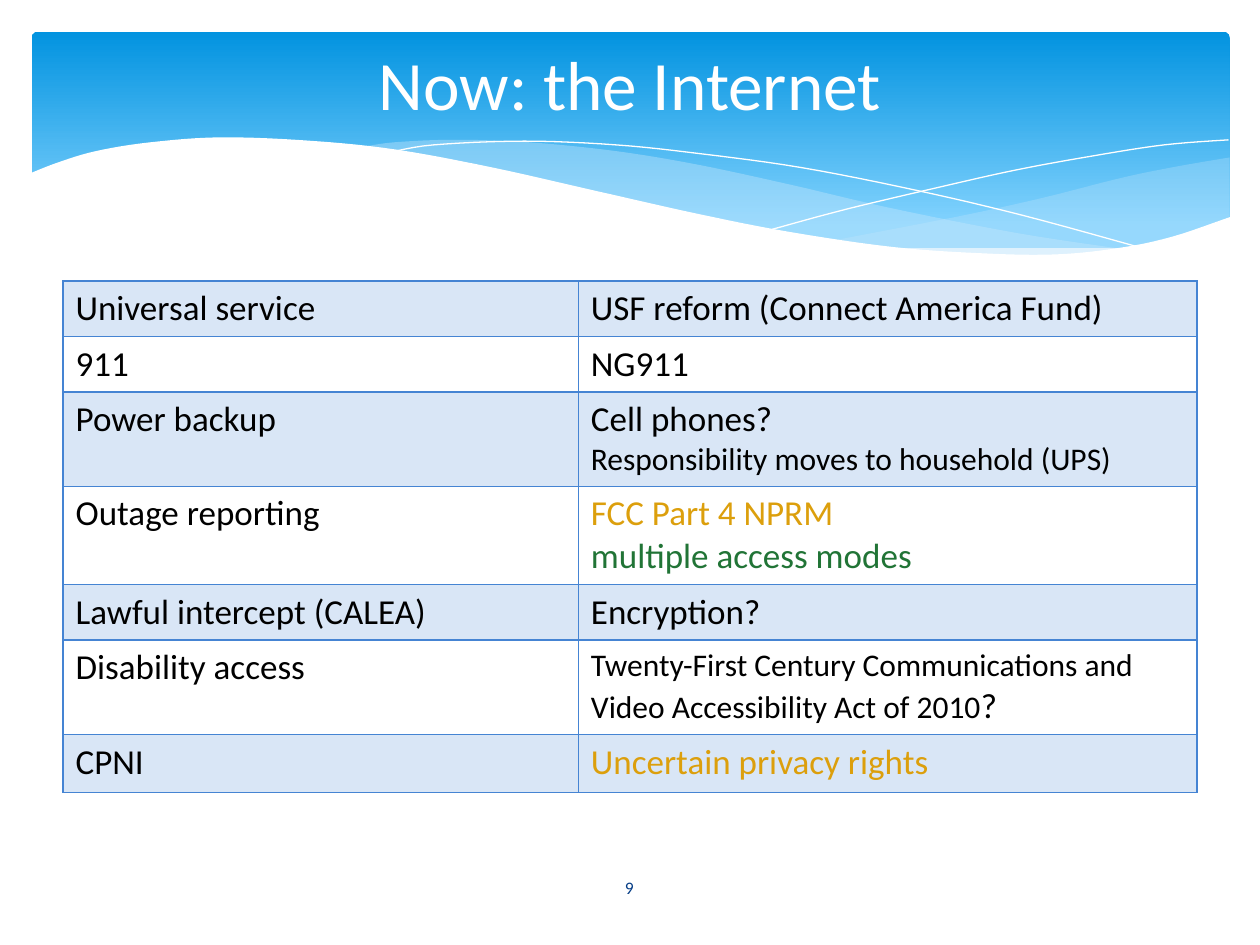
from pptx import Presentation
from pptx.dml.color import RGBColor
from pptx.enum.shapes import MSO_SHAPE
from pptx.enum.text import MSO_ANCHOR, PP_ALIGN
from pptx.oxml import parse_xml
from pptx.oxml.ns import nsdecls, qn
from pptx.util import Inches, Pt
from lxml import etree

ROUND = MSO_SHAPE.ROUNDED_RECTANGLE
MIDDLE = MSO_ANCHOR.MIDDLE
CENTER = PP_ALIGN.CENTER

# The grid has 100 columns and 75 rows
COLS = 100
WHITE, BLACK, BLUE, GOLD, GREEN = "FFFFFF", "000000", "4584D3", "DC9F0C", "217436"
MIST, NAVY, SKY, PALE = "C6E7FC", "073E87", "0293E0", "83D3FE"


def rgb(code):
    return RGBColor.from_string(code)


def smooth(knots, steps=6):
    """Points of a Catmull-Rom curve through the knots."""
    pts = [knots[0], *knots, knots[-1]]
    curve = [knots[0]]
    for a, b, c, d in zip(pts, pts[1:], pts[2:], pts[3:]):
        for i in range(1, steps + 1):
            t = i / steps
            curve.append(tuple(
                (2 * q + (r - p) * t + (2 * p - 5 * q + 4 * r - s) * t ** 2
                 + (3 * q - p - 3 * r + s) * t ** 3) / 2
                for p, q, r, s in zip(a, b, c, d)))
    return curve


class Deck:
    font = {"name": "Calibri", "size": 20, "color": BLACK, "bold": False}

    def __init__(self):
        self.prs = Presentation()
        self.prs.slide_width, self.prs.slide_height = Inches(10), Inches(7.5)
        self.unit = self.prs.slide_width // COLS
        self.slide = self.prs.slides.add_slide(self.prs.slide_layouts[6])
        self.shapes = self.slide.shapes

    def size(self, *cells):
        return [round(n * self.unit) for n in cells]

    def paint(self, fill, color, alpha=100):
        fill.solid()
        fill.fore_color.rgb = rgb(color)
        if alpha < 100:
            tint = fill._xPr.find(qn("a:solidFill"))[0]
            etree.SubElement(tint, qn("a:alpha"), val=str(alpha * 1000))

    def words(self, para, text, **style):
        run = para.add_run()
        run.text = text
        for key, value in {**self.font, **style}.items():
            if key == "color":
                run.font.color.rgb = rgb(value)
            else:
                setattr(run.font, key, Pt(value) if key == "size" else value)

    def banner(self, box, stops):
        shape = self.shapes.add_shape(ROUND, *self.size(*box))
        shape.adjustments[0] = 0.03
        shape.shadow.inherit = False
        shape.line.fill.background()
        shape.fill.gradient()
        shape.fill.gradient_angle = 270
        for stop, (place, color) in zip(shape.fill.gradient_stops, stops):
            stop.position, stop.color.rgb = place, rgb(color)

    def wave(self, *edges, fill=None, alpha=100, line=None):
        first, *rest = [self.size(*p) for edge in edges for p in smooth(edge)]
        outline = self.shapes.build_freeform(*first)
        outline.add_line_segments(rest, close=fill is not None)
        shape = outline.convert_to_shape()
        shape.shadow.inherit = False
        if fill:
            self.paint(shape.fill, fill, alpha)
        else:
            shape.fill.background()
        if line:
            shape.line.color.rgb = rgb(line)
            shape.line.width = Pt(0)
        else:
            shape.line.fill.background()

    def label(self, box, text, **style):
        frame = self.shapes.add_textbox(*self.size(*box)).text_frame
        frame.word_wrap = True
        frame.vertical_anchor = MIDDLE
        frame.paragraphs[0].alignment = CENTER
        self.words(frame.paragraphs[0], text, **style)

    def border(self, cell, color):
        props = cell._tc.get_or_add_tcPr()
        for i, side in enumerate(("lnL", "lnR", "lnT", "lnB")):
            props.insert(i, parse_xml(
                f'<a:{side} {nsdecls("a")} w="12700"><a:solidFill>'
                f'<a:srgbClr val="{color}"/></a:solidFill></a:{side}>'))

    def table(self, left, top, widths, highs, rows):
        box = self.size(left, top, sum(widths), sum(highs))
        table = self.shapes.add_table(len(rows), len(widths), *box).table
        table.first_row = table.horz_banding = False
        for col, width in zip(table.columns, self.size(*widths)):
            col.width = width
        for row, high in zip(table.rows, self.size(*highs)):
            row.height = high
        for r, row in enumerate(rows):
            for c, lines in enumerate(row):
                cell = table.cell(r, c)
                if r % 2:
                    cell.fill.background()
                else:
                    self.paint(cell.fill, BLUE, 20)
                self.border(cell, BLUE)
                frame = cell.text_frame
                for i, runs in enumerate(lines):
                    para = frame.add_paragraph() if i else frame.paragraphs[0]
                    for text, style in runs:
                        self.words(para, text, **style)


def line(text, **style):
    return [(text, style)]


def main():
    deck = Deck()

    # Banner with its waves
    deck.banner((2.5, 2.5, 95.1, 17.2), [(0, SKY), (0.9, PALE)])
    deck.wave([(97.6, 12.5), (93.5, 13.2), (89.1, 14.1), (83.2, 15.6),
               (77.9, 16.8), (72.9, 17.8), (66.1, 19.1)],
              [(66.1, 19.1), (71.9, 19.8), (76.9, 20.2), (81.4, 20.3),
               (86.3, 20.1), (90.5, 19.4), (94.2, 18.5), (97.6, 17.2)],
              fill=MIST, alpha=29)
    deck.wave([(89.3, 19.8), (80.7, 18.5), (70.6, 16.5), (62.9, 14.7),
               (55.5, 13.1), (48.9, 12), (42, 11.3), (36.1, 11.1),
               (31.3, 11.3), (28.6, 11.7)],
              [(28.6, 11.7), (36.2, 12.8), (44.9, 14.7), (53, 16.6),
               (61.8, 18.4), (69.5, 19.6), (76.1, 20.2), (81.8, 20.4),
               (85.7, 20.2), (89.3, 19.8)],
              fill=MIST, alpha=40)
    deck.wave([(30.9, 12.1), (34.4, 11.5), (41.6, 11.2), (48.9, 11.5),
               (55.6, 12.2), (63.6, 13.3), (72.7, 15.1), (81.2, 17.1),
               (90.7, 19.7)], line=WHITE)
    deck.wave([(61.3, 18.2), (67.2, 16.6), (74.8, 14.8), (80.6, 13.5),
               (86.6, 12.4), (92.4, 11.5), (97.5, 11.1)], line=WHITE)

    # White foot that cuts the banner
    deck.wave([(2.3, 13.8), (4.6, 12.9), (7.6, 12), (11.9, 11.3),
               (17.7, 10.9), (25, 11.2), (31.6, 11.9), (39.1, 13.3),
               (47.5, 15.2), (55.5, 17), (62.6, 18.4), (70.8, 19.6),
               (77.8, 20.1), (83.7, 20.2), (88.7, 19.7), (93, 18.8),
               (97.7, 17.2)],
              [(97.7, 25.5), (2.3, 25.5)], fill=WHITE)

    # Title and page number
    deck.label((5, 2.8, 90, 7.5), "Now: the Internet", size=39.6, color=WHITE)
    deck.label((43.6, 68.4, 12.7, 4), "9", size=10, color=NAVY)

    # Old duties beside their new form
    act = "Twenty-First Century Communications and Video Accessibility Act of 2010"
    pairs = [
        ("Universal service", [line("USF reform (Connect America Fund)")]),
        ("911", [line("NG911")]),
        ("Power backup", [line("Cell phones?"),
                          line("Responsibility moves to household (UPS)", size=18)]),
        ("Outage reporting", [line("FCC Part 4 NPRM", color=GOLD),
                              line("multiple access modes", color=GREEN)]),
        ("Lawful intercept (CALEA)", [line("Encryption?")]),
        ("Disability access", [line(act, size=18) + line("?")]),
        ("CPNI", [line("Uncertain privacy rights", color=GOLD)]),
    ]
    deck.table(5, 22.3, (40.9, 49.1), (4.4, 4.4, 7.5, 7.8, 4.4, 7.5, 4.6),
               [([line(old)], new) for old, new in pairs])

    deck.prs.save("out.pptx")


if __name__ == "__main__":
    main()
